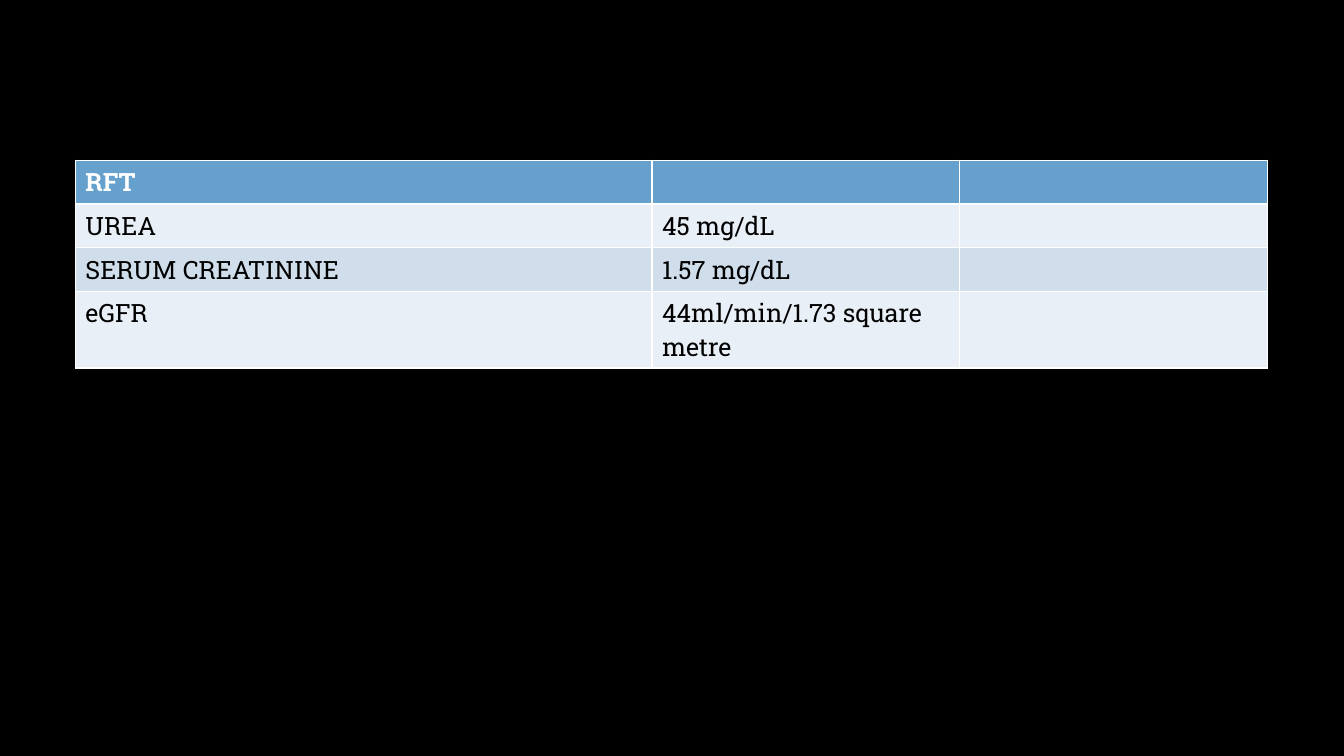
import pptx
import pptx.util
import pptx.dml.color
import pptx.oxml
import pptx.oxml.ns
from dataclasses import dataclass

Cm = pptx.util.Cm
Pt = pptx.util.Pt
Color = pptx.dml.color.RGBColor.from_string


@dataclass
class Theme:
    back: str = "000000"
    head: str = "65A1CC"
    bands: tuple = ("E9EFF6", "D0DEEC")
    light: str = "FFFFFF"
    dark: str = "000000"
    font: str = "Roboto Slab"
    size: int = 18
    line: int = 1


theme = Theme()


def add_edges(cell):
    props = cell._tc.get_or_add_tcPr()
    for side in "LRTB":
        props.append(pptx.oxml.parse_xml(
            f'<a:ln{side} {pptx.oxml.ns.nsdecls("a")} w="{Pt(theme.line)}">'
            f'<a:solidFill><a:srgbClr val="{theme.light}"/></a:solidFill>'
            f'</a:ln{side}>'))


# Slide
deck = pptx.Presentation()
deck.slide_width, deck.slide_height = Cm(33.87), Cm(19.05)
slide = deck.slides.add_slide(deck.slide_layouts[6])
slide.background.fill.solid()
slide.background.fill.fore_color.rgb = Color(theme.back)

# Renal function results
rows = [
    ("RFT", "", ""),
    ("UREA", "45 mg/dL", ""),
    ("SERUM CREATININE", "1.57 mg/dL", ""),
    ("eGFR", "44ml/min/1.73 square metre", ""),
]
widths = [14.53, 7.76, 7.76]
height = 1.1

# Table
table = slide.shapes.add_table(
    len(rows), len(widths), Cm(1.9), Cm(4.04),
    Cm(sum(widths)), Cm(height * len(rows))).table
for column, width in zip(table.columns, widths):
    column.width = Cm(width)

# Cells
for r, texts in enumerate(rows):
    table.rows[r].height = Cm(height)
    top = r == 0
    fill = theme.head if top else theme.bands[(r - 1) % 2]
    style = {"name": theme.font, "size": Pt(theme.size), "bold": top}
    for c, text in enumerate(texts):
        cell = table.cell(r, c)
        add_edges(cell)
        cell.fill.solid()
        cell.fill.fore_color.rgb = Color(fill)
        if text:
            run = cell.text_frame.paragraphs[0].add_run()
            run.text = text
            for key, value in style.items():
                setattr(run.font, key, value)
            run.font.color.rgb = Color(theme.light if top else theme.dark)

deck.save("out.pptx")
